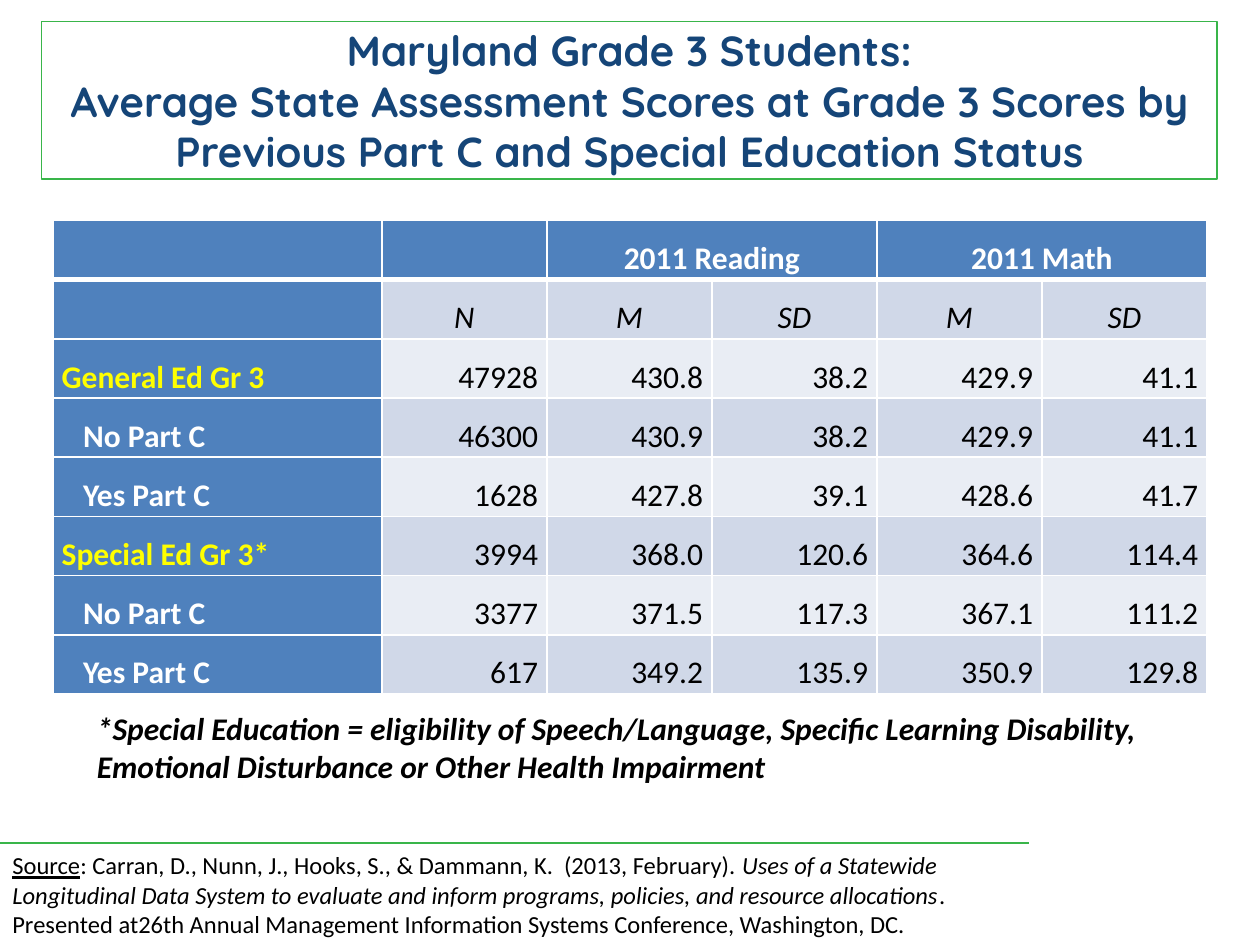
from dataclasses import dataclass

from lxml import etree
from pptx import Presentation
from pptx.dml.color import RGBColor
from pptx.enum.shapes import MSO_CONNECTOR, MSO_SHAPE
from pptx.enum.text import MSO_ANCHOR, PP_ALIGN
from pptx.oxml.ns import qn
from pptx.util import Inches, Pt

LEFT, CENTER, RIGHT = PP_ALIGN.LEFT, PP_ALIGN.CENTER, PP_ALIGN.RIGHT
MIDDLE = MSO_ANCHOR.MIDDLE
RECTANGLE = MSO_SHAPE.RECTANGLE
STRAIGHT = MSO_CONNECTOR.STRAIGHT


@dataclass(frozen=True)
class Theme:
    title_font: str = "Quicksand"
    body_font: str = "Calibri"
    title_size: int = 24
    body_size: int = 18
    source_size: int = 14
    navy: str = "154578"
    green: str = "39B54A"
    blue: str = "4F81BD"
    bands: tuple = ("D0D8E8", "E9EDF4")
    yellow: str = "FFFF00"
    white: str = "FFFFFF"
    black: str = "000000"


class SlideBuilder:
    def __init__(self, page, theme):
        self.page = page
        self.theme = theme

    def add_span(self, para, text, size, color, font=None, bold=False, italic=False, underline=False):
        span = para.add_run()
        span.text = text
        span.font.name = font or self.theme.body_font
        span.font.size = Pt(size)
        span.font.color.rgb = RGBColor.from_string(color)
        span.font.bold = bold
        span.font.italic = italic
        span.font.underline = underline

    def rule(self, left, right, top, width):
        line = self.page.shapes.add_connector(
            STRAIGHT, Inches(left), Inches(top), Inches(right), Inches(top))
        line.line.color.rgb = RGBColor.from_string(self.theme.green)
        line.line.width = Pt(width)
        etree.SubElement(line._element.spPr, qn("a:effectLst"))

    def title(self, lines, left, top, width, height):
        box = self.page.shapes.add_shape(
            RECTANGLE, Inches(left), Inches(top), Inches(width), Inches(height))
        box.shadow.inherit = False
        box.fill.background()
        box.line.color.rgb = RGBColor.from_string(self.theme.green)
        box.line.width = Pt(1)
        box.text_frame.word_wrap = True
        box.text_frame.vertical_anchor = MIDDLE
        para = box.text_frame.paragraphs[0]
        para.alignment = CENTER
        for index, text in enumerate(lines):
            if index:
                para.add_line_break()
            self.add_span(para, text, self.theme.title_size, self.theme.navy,
                          self.theme.title_font, bold=True)

    def text(self, spans, size, left, top, width, height):
        box = self.page.shapes.add_textbox(
            Inches(left), Inches(top), Inches(width), Inches(height))
        box.text_frame.word_wrap = True
        para = box.text_frame.paragraphs[0]
        for text, style in spans:
            self.add_span(para, text, size, self.theme.black, **style)

    def cell_borders(self, cell, **widths):
        properties = cell._tc.get_or_add_tcPr()
        for side in "LRTB":
            line = etree.SubElement(properties, qn(f"a:ln{side}"), w=str(Pt(widths.get(side, 1))))
            fill = etree.SubElement(line, qn("a:solidFill"))
            etree.SubElement(fill, qn("a:srgbClr"), val=self.theme.white)

    def cell_text(self, cell, text, alignment, color, indent=0, **style):
        cell.margin_left = Inches(0.07 + indent)
        cell.margin_right = Inches(0.07)
        cell.margin_top = cell.margin_bottom = 0
        para = cell.text_frame.paragraphs[0]
        para.alignment = alignment
        para.line_spacing = 1.5
        self.add_span(para, text, self.theme.body_size, color, **style)

    def score_table(self, groups, measures, records, left, top, label_width, value_width, row_height):
        theme = self.theme
        row_count, column_count = len(records) + 2, len(measures) + 1
        table = self.page.shapes.add_table(
            row_count, column_count, Inches(left), Inches(top),
            Inches(label_width + value_width * len(measures)),
            Inches(row_height * row_count)).table
        for index, column in enumerate(table.columns):
            column.width = Inches(value_width if index else label_width)
        for row_index, row in enumerate(table.rows):
            row.height = Inches(row_height)
            for column_index, cell in enumerate(row.cells):
                self.cell_borders(cell, T=3 if row_index == 1 else 1, B=1 if row_index else 3)
                header = row_index == 0 or column_index == 0
                color = theme.blue if header else theme.bands[(row_index - 1) % 2]
                cell.fill.solid()
                cell.fill.fore_color.rgb = RGBColor.from_string(color)

        for index, group in enumerate(groups):
            first = 2 + 2 * index
            table.cell(0, first).merge(table.cell(0, first + 1))
            self.cell_text(table.cell(0, first), group, CENTER, theme.white, bold=True)
        for column_index, measure in enumerate(measures, 1):
            self.cell_text(table.cell(1, column_index), measure, CENTER, theme.black, italic=True)
        for row_index, (label, *values) in enumerate(records, 2):
            subgroup = label.endswith("Part C")
            self.cell_text(table.cell(row_index, 0), label, LEFT,
                           theme.white if subgroup else theme.yellow,
                           indent=0.17 if subgroup else 0, bold=True)
            for column_index, value in enumerate(values, 1):
                self.cell_text(table.cell(row_index, column_index), value, RIGHT, theme.black)


TITLE = (
    "Maryland Grade 3 Students:",
    "Average State Assessment Scores at Grade 3 Scores by Previous Part C and Special Education Status",
)
GROUPS = ("2011 Reading", "2011 Math")
MEASURES = ("N", "M", "SD", "M", "SD")
RECORDS = (
    ("General Ed Gr 3", "47928", "430.8", "38.2", "429.9", "41.1"),
    ("No Part C", "46300", "430.9", "38.2", "429.9", "41.1"),
    ("Yes Part C", "1628", "427.8", "39.1", "428.6", "41.7"),
    ("Special Ed Gr 3*", "3994", "368.0", "120.6", "364.6", "114.4"),
    ("No Part C", "3377", "371.5", "117.3", "367.1", "111.2"),
    ("Yes Part C", "617", "349.2", "135.9", "350.9", "129.8"),
)
FOOTNOTE = (
    ("*Special Education = eligibility of Speech/Language, Specific Learning Disability, "
     "Emotional Disturbance or Other Health Impairment", {"bold": True, "italic": True}),
)
SOURCE = (
    ("Source", {"underline": True}),
    (": Carran, D., Nunn, J., Hooks, S., & Dammann, K.  (2013, February). ", {}),
    ("Uses of a Statewide Longitudinal Data System to evaluate and inform programs, "
     "policies, and resource allocations", {"italic": True}),
    (". Presented at26th Annual Management Information Systems Conference, Washington, DC.", {}),
)


def main():
    deck = Presentation()
    deck.slide_width, deck.slide_height = Inches(10), Inches(7.5)
    theme = Theme()
    builder = SlideBuilder(deck.slides.add_slide(deck.slide_layouts[6]), theme)
    builder.rule(0, 8.17, 6.69, 1.5)
    builder.title(TITLE, 0.33, 0.17, 9.33, 1.25)
    builder.score_table(GROUPS, MEASURES, RECORDS, left=0.42, top=1.75,
                        label_width=2.61, value_width=1.31, row_height=0.47)
    builder.text(FOOTNOTE, theme.body_size, 0.67, 5.58, 8.92, 0.71)
    builder.text(SOURCE, theme.source_size, 0, 6.7, 8, 0.81)
    deck.save("out.pptx")


if __name__ == "__main__":
    main()
